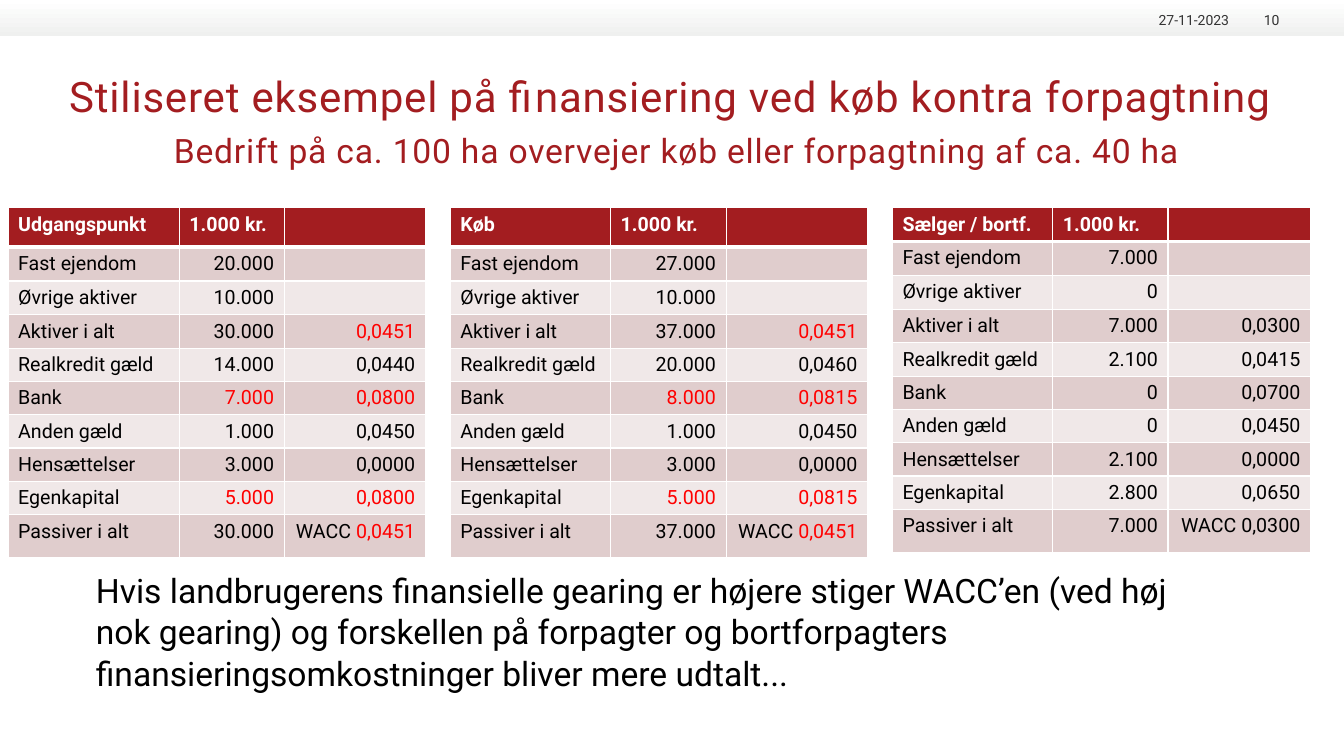
import dataclasses

import lxml.etree
import pptx
import pptx.dml.color
import pptx.enum.shapes
import pptx.enum.text
import pptx.oxml.ns
import pptx.util

ALIGN = pptx.enum.text.PP_ALIGN
ANCHOR = pptx.enum.text.MSO_ANCHOR
SLIDE_WIDTH = pptx.util.Inches(13.33)
SLIDE_HEIGHT = pptx.util.Inches(7.5)


@dataclasses.dataclass(frozen=True)
class Theme:
    font: str = "Roboto"
    brand: str = "A31D20"
    white: str = "FFFFFF"
    black: str = "000000"
    alert: str = "FF0000"
    grey: str = "333333"
    band_end: str = "EFF0EF"
    row_fills: tuple = ("F0E8E8", "E0CDCD")
    title_size: int = 30
    text_size: int = 24
    table_size: int = 14
    small_size: int = 10
    line_spacing: float = 1.03


THEME = Theme()

# Table content: one label per row, shared by all three balance sheets
LABELS = ["Fast ejendom", "Øvrige aktiver", "Aktiver i alt", "Realkredit gæld", "Bank",
          "Anden gæld", "Hensættelser", "Egenkapital", "Passiver i alt"]
ALERT_AMOUNTS = {"Bank", "Egenkapital"}
ALERT_RATES = {"Aktiver i alt", "Bank", "Egenkapital", "Passiver i alt"}


@dataclasses.dataclass(frozen=True)
class Balance:
    heading: str
    amounts: list
    rates: list
    column_shares: tuple
    header_share: float = 5.2
    alerts: bool = True


BALANCES = [
    Balance("Udgangspunkt",
            ["20.000", "10.000", "30.000", "14.000", "7.000", "1.000", "3.000", "5.000", "30.000"],
            ["", "", "0,0451", "0,0440", "0,0800", "0,0450", "0,0000", "0,0800", "0,0451"],
            (12.75, 7.8, 10.5)),
    Balance("Køb",
            ["27.000", "10.000", "37.000", "20.000", "8.000", "1.000", "3.000", "5.000", "37.000"],
            ["", "", "0,0451", "0,0460", "0,0815", "0,0450", "0,0000", "0,0815", "0,0451"],
            (11.93, 8.6, 10.52)),
    Balance("Sælger / bortf.",
            ["7.000", "0", "7.000", "2.100", "0", "0", "2.100", "2.800", "7.000"],
            ["", "", "0,0300", "0,0415", "0,0700", "0,0450", "0,0000", "0,0650", "0,0300"],
            (11.93, 8.58, 10.6), header_share=3.6, alerts=False),
]


def rgb(color):
    return pptx.dml.color.RGBColor.from_string(color)


def across(percent):
    """Percentage of the slide's width."""
    return round(SLIDE_WIDTH * percent / 100)


def down(percent):
    """Percentage of the slide's height."""
    return round(SLIDE_HEIGHT * percent / 100)


def area(left, top, width, height):
    return across(left), down(top), across(width), down(height)


def add_run(paragraph, text, size, color, bold=False):
    run = paragraph.add_run()
    run.text = text
    run.font.name = THEME.font
    run.font.size = pptx.util.Pt(size)
    run.font.bold = bold
    run.font.color.rgb = rgb(color)
    return run


def clear_frame(frame, anchor=ANCHOR.TOP):
    """Remove insets and shrinking; return the first paragraph."""
    frame.margin_left = frame.margin_top = frame.margin_right = frame.margin_bottom = 0
    frame.word_wrap = True
    frame.auto_size = pptx.enum.text.MSO_AUTO_SIZE.NONE
    frame.vertical_anchor = anchor
    return frame.paragraphs[0]


def place(shape, bounds):
    shape.left, shape.top, shape.width, shape.height = bounds


def add_header_band(slide):
    band = slide.shapes.add_shape(pptx.enum.shapes.MSO_SHAPE.RECTANGLE, *area(0, 0, 100, 4.8))
    band.shadow.inherit = False
    band.line.fill.background()
    band.fill.gradient()
    band.fill.gradient_angle = 270
    for stop, color, position in zip(band.fill.gradient_stops,
                                     (THEME.white, THEME.band_end), (0, 1)):
        stop.color.rgb = rgb(color)
        stop.position = position


def add_header_text(slide, text, left, width):
    box = slide.shapes.add_textbox(*area(left, 1.2, width, 2.53))
    paragraph = clear_frame(box.text_frame, ANCHOR.BOTTOM)
    paragraph.alignment = ALIGN.RIGHT
    add_run(paragraph, text, THEME.small_size, THEME.grey)


def fill_title(title, heading, subheading):
    place(title, area(4.8, 9.07, 90.3, 12.53))
    paragraph = clear_frame(title.text_frame)
    paragraph.alignment = ALIGN.CENTER
    paragraph.line_spacing = THEME.line_spacing
    runs = [add_run(paragraph, heading, THEME.title_size, THEME.brand)]
    paragraph.add_line_break()
    # The leading space gives the second line the height of the first
    runs.append(add_run(paragraph, " ", THEME.title_size, THEME.brand))
    runs.append(add_run(paragraph, subheading, THEME.text_size, THEME.brand))
    for run in runs:
        run.font._element.set("spc", "60")


def fill_conclusion(body, text):
    place(body, area(7.13, 75.2, 83.8, 16.13))
    paragraph = clear_frame(body.text_frame)
    properties = paragraph._p.get_or_add_pPr()
    properties.set("marL", "0")
    properties.set("indent", "0")
    lxml.etree.SubElement(properties, pptx.oxml.ns.qn("a:buNone"))
    paragraph.alignment = ALIGN.LEFT
    paragraph.line_spacing = THEME.line_spacing
    paragraph.space_before = pptx.util.Pt(0)
    add_run(paragraph, text, THEME.text_size, THEME.black)


def add_borders(cell, top, bottom):
    qn = pptx.oxml.ns.qn
    properties = cell._tc.get_or_add_tcPr()
    for side, points in (("L", 1), ("R", 1), ("T", top), ("B", bottom)):
        line = lxml.etree.SubElement(properties, qn("a:ln" + side), w=str(pptx.util.Pt(points)))
        fill = lxml.etree.SubElement(line, qn("a:solidFill"))
        lxml.etree.SubElement(fill, qn("a:srgbClr"), val=THEME.white)


def fill_cell(cell, pieces, row, align):
    """Write (text, colour) pieces and style the cell by its row."""
    add_borders(cell, top=3 if row == 1 else 1, bottom=3 if row == 0 else 1)
    cell.fill.solid()
    cell.fill.fore_color.rgb = rgb(THEME.row_fills[row % 2] if row else THEME.brand)
    paragraph = cell.text_frame.paragraphs[0]
    paragraph.alignment = align
    for text, color in pieces:
        add_run(paragraph, text, THEME.table_size, color, bold=row == 0)
    if not pieces:
        paragraph._p.get_or_add_endParaRPr().set("sz", str(THEME.table_size * 100))


def balance_rows(balance):
    """Yield each row as three lists of (text, colour) pieces."""
    yield [[(balance.heading, THEME.white)], [("1.000 kr.", THEME.white)], []]
    for label, amount, rate in zip(LABELS, balance.amounts, balance.rates):
        amount_color, rate_color = (
            THEME.alert if balance.alerts and label in alerted else THEME.black
            for alerted in (ALERT_AMOUNTS, ALERT_RATES))
        rate_pieces = [(rate, rate_color)] if rate else []
        if label == LABELS[-1]:
            rate_pieces.insert(0, ("WACC ", THEME.black))
        yield [[(label, THEME.black)], [(amount, amount_color)], rate_pieces]


def add_balance(slide, position, balance):
    row_shares = [balance.header_share] + [4.27] * (len(LABELS) - 1) + [5.73]
    bounds = area(0.6 + 32.9 * position, 27.47, sum(balance.column_shares), sum(row_shares))
    table = slide.shapes.add_table(len(row_shares), 3, *bounds).table
    table.horz_banding = False
    for column, share in zip(table.columns, balance.column_shares):
        column.width = across(share)
    for row, share in zip(table.rows, row_shares):
        row.height = down(share)
    for row, contents in enumerate(balance_rows(balance)):
        for column, pieces in enumerate(contents):
            align = ALIGN.RIGHT if row and column else ALIGN.LEFT
            fill_cell(table.cell(row, column), pieces, row, align)


def main():
    deck = pptx.Presentation()
    deck.slide_width, deck.slide_height = SLIDE_WIDTH, SLIDE_HEIGHT
    slide = deck.slides.add_slide(deck.slide_layouts[1])
    # Header
    add_header_band(slide)
    add_header_text(slide, "27-11-2023", 84.77, 6.68)
    add_header_text(slide, "10", 92.05, 3.15)
    # Title, balance sheets and conclusion
    fill_title(slide.shapes.title, "Stiliseret eksempel på finansiering ved køb kontra forpagtning",
               "Bedrift på ca. 100 ha overvejer køb eller forpagtning af ca. 40 ha")
    for position, balance in enumerate(BALANCES):
        add_balance(slide, position, balance)
    fill_conclusion(slide.placeholders[1],
                    "Hvis landbrugerens finansielle gearing er højere stiger WACC’en (ved høj nok "
                    "gearing) og forskellen på forpagter og bortforpagters "
                    "finansieringsomkostninger bliver mere udtalt...")
    deck.save("out.pptx")


if __name__ == "__main__":
    main()
